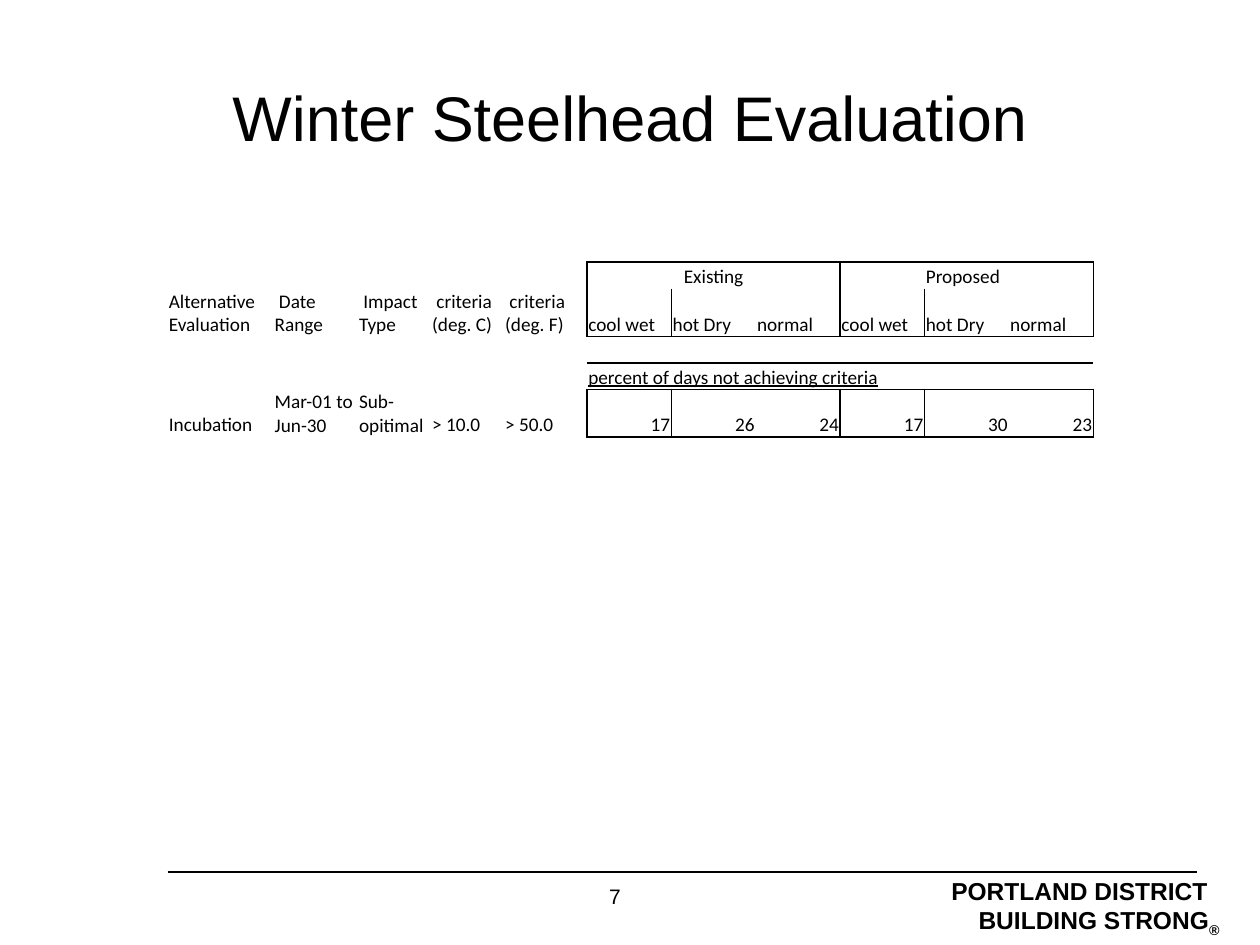
from dataclasses import dataclass
from typing import Optional

from lxml import etree
from pptx import Presentation
from pptx import util as u
from pptx.dml.color import RGBColor
from pptx.enum import shapes, text
from pptx.oxml.ns import qn

COLORS = {"ink": "000000"}
LEFT, CENTER, RIGHT = text.PP_ALIGN.LEFT, text.PP_ALIGN.CENTER, text.PP_ALIGN.RIGHT
TOP, MIDDLE = text.MSO_ANCHOR.TOP, text.MSO_ANCHOR.MIDDLE
PLAIN_GRID = "{2D5ABB26-0587-4C30-8999-92F81FD0307C}"  # no style, no grid
CELL_SIZE = 11


@dataclass
class Label:
    text: str
    left: float
    top: float
    width: float
    height: float
    size: int
    bold: bool = False
    align: text.PP_ALIGN = LEFT
    anchor: text.MSO_ANCHOR = TOP
    inset: tuple[float, float] = (0, 0)
    subscript: Optional[str] = None


@dataclass
class Outline:
    rows: range
    cols: range
    sides: str = "LRTB"


def add_run(p, words: str, *, size: int, font: str = "Arial",
            bold: bool = False, underline: bool = False, baseline: int = 0):
    r = p.add_run()
    r.text = words
    r.font.name, r.font.size = font, u.Pt(size)
    r.font.bold, r.font.underline = bold, underline
    r.font.color.rgb = RGBColor.from_string(COLORS["ink"])
    if baseline:
        r._r.get_or_add_rPr().set("baseline", str(baseline))


def add_label(s, label: Label) -> None:
    sp = s.shapes.add_textbox(*map(u.Inches, (label.left, label.top, label.width, label.height)))
    tf = sp.text_frame
    tf.word_wrap = True
    tf.vertical_anchor = label.anchor
    tf.margin_left = tf.margin_right = u.Inches(label.inset[0])
    tf.margin_top = tf.margin_bottom = u.Inches(label.inset[1])
    p = tf.paragraphs[0]
    p.alignment = label.align
    add_run(p, label.text, size=label.size, bold=label.bold)
    if label.subscript:
        add_run(p, label.subscript, size=label.size, bold=label.bold, baseline=-25000)


def fill_cell(cell, words: str, *, align=LEFT, underline: bool = False) -> None:
    cell.margin_left = cell.margin_right = cell.margin_top = u.Inches(0.01)
    cell.margin_bottom = 0
    cell.vertical_anchor = text.MSO_ANCHOR.BOTTOM
    cell.fill.background()
    p = cell.text_frame.paragraphs[0]
    p.alignment = align
    if words:
        add_run(p, words, size=CELL_SIZE, font="Calibri", underline=underline)
    else:  # keeps an empty row from growing
        etree.SubElement(p._p, qn("a:endParaRPr")).set("sz", str(CELL_SIZE * 100))


def add_borders(cell, sides: str) -> None:
    tc_pr = cell._tc.get_or_add_tcPr()
    for i, side in enumerate(sides):
        ln = etree.Element(qn(f"a:ln{side}"), w=str(u.Pt(1)))
        fill = etree.SubElement(ln, qn("a:solidFill"))
        etree.SubElement(fill, qn("a:srgbClr")).set("val", COLORS["ink"])
        tc_pr.insert(i, ln)


def draw_outline(table, box: Outline) -> None:
    for row in box.rows:
        for col in box.cols:
            on_edge = {"L": col == box.cols[0], "R": col == box.cols[-1],
                       "T": row == box.rows[0], "B": row == box.rows[-1]}
            add_borders(table.cell(row, col), "".join(k for k in box.sides if on_edge[k]))


def add_criteria_table(s) -> None:
    years = ["cool wet", "hot Dry", "normal"]
    rows = [
        [""] * 5 + ["Existing", "", "", "", "Proposed", ""],
        ["Alternative Evaluation", " Date Range", " Impact Type",
         " criteria (deg. C)", " criteria (deg. F)"] + years * 2,
        [""] * 11,
        [""] * 5 + ["percent of days not achieving criteria"] + [""] * 5,
        ["Incubation", "Mar-01 to Jun-30", "Sub-opitimal", "> 10.0", "> 50.0",
         "17", "26", "24", "17", "30", "23"],
    ]
    widths = [0.84, 0.67, 0.58, 0.58, 0.66] + [0.67] * 6
    heights = [0.21, 0.38, 0.21, 0.21, 0.38]
    frame = s.shapes.add_table(len(rows), len(widths), u.Inches(1.33), u.Inches(2.08),
                               u.Inches(sum(widths)), u.Inches(sum(heights)))
    table = frame.table
    table.first_row = table.horz_banding = False
    table._tbl.tblPr.find(qn("a:tableStyleId")).text = PLAIN_GRID
    for col, width in zip(table.columns, widths):
        col.width = u.Inches(width)
    for row, height in zip(table.rows, heights):
        row.height = u.Inches(height)

    for i, row in enumerate(rows):
        for j, words in enumerate(row):
            align = CENTER if words == "Existing" else RIGHT if words.isdigit() else LEFT
            fill_cell(table.cell(i, j), words, align=align, underline=i == 3)

    # Boxes around each scenario, and rules around the caption row
    existing, proposed = range(5, 8), range(8, 11)
    for block in (range(0, 2), range(4, 5)):
        for cols in (existing, proposed):
            draw_outline(table, Outline(block, cols))
    for row in (2, 3):
        draw_outline(table, Outline(range(row, row + 1), range(5, 11), "TB"))

    table.cell(0, 5).merge(table.cell(0, 7))
    for row in (2, 3):
        table.cell(row, 5).merge(table.cell(row, 8))


def add_rule(s, x1: float, x2: float, y: float) -> None:
    line = s.shapes.add_connector(shapes.MSO_CONNECTOR.STRAIGHT,
                                  *map(u.Inches, (x1, y, x2, y)))
    line.line.color.rgb = RGBColor.from_string(COLORS["ink"])
    line.line.width = u.Pt(0.75)
    etree.SubElement(line._element.spPr, qn("a:effectLst"))


def main() -> None:
    prs = Presentation()
    prs.slide_width, prs.slide_height = u.Inches(10), u.Inches(7.5)
    s = prs.slides.add_slide(prs.slide_layouts[6])

    # Footer
    add_rule(s, 1.33, 9.5, 6.92)
    labels = [
        Label("BUILDING STRONG", 6.83, 7.18, 2.85, 0.23, 14, bold=True, align=RIGHT,
              subscript="®"),
        Label("PORTLAND DISTRICT", 7.55, 6.95, 2.27, 0.24, 14, bold=True),
        Label("7", 4.17, 6.96, 1.42, 0.3, 12, align=CENTER, inset=(0.1, 0.05)),
        # Title
        Label("Winter Steelhead Evaluation", 0.5, 0.3, 9, 1.25, 36, align=CENTER,
              anchor=MIDDLE, inset=(0.1, 0.05)),
    ]
    for label in labels:
        add_label(s, label)

    add_criteria_table(s)
    prs.save("out.pptx")


if __name__ == "__main__":
    main()
